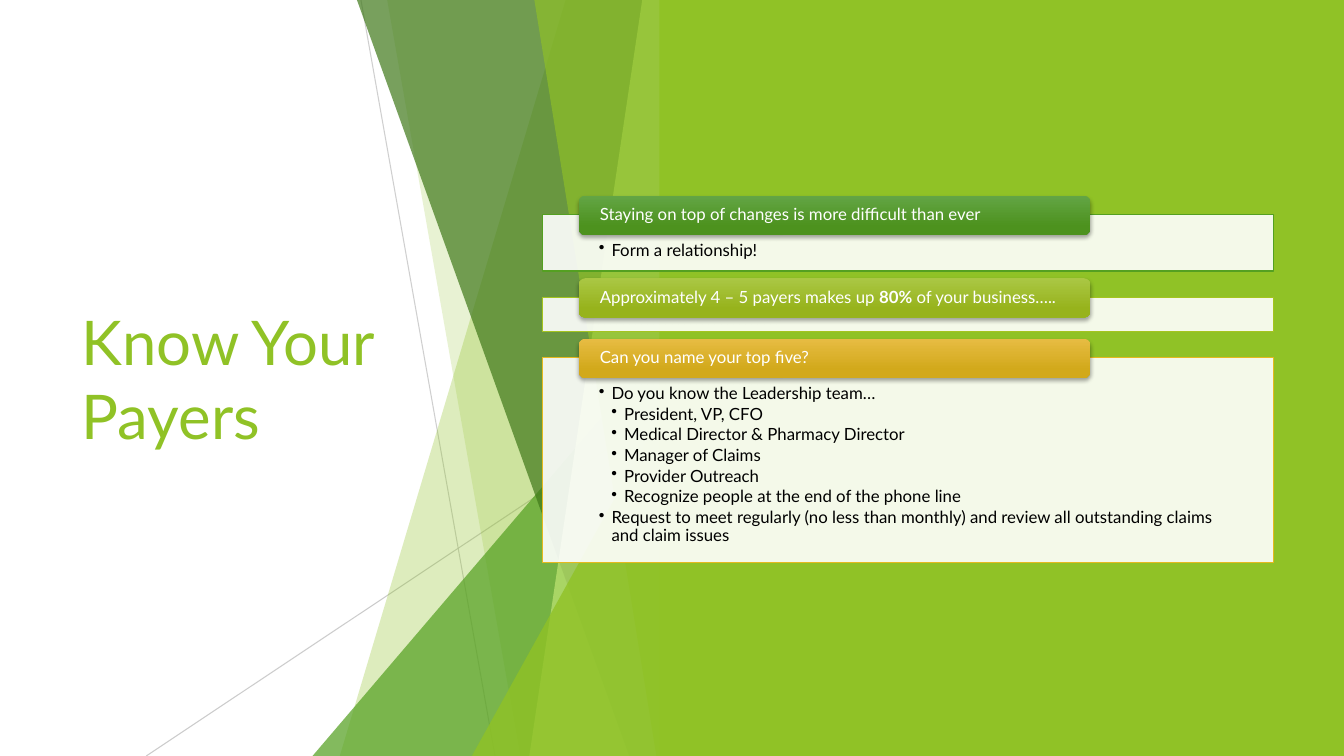
from dataclasses import dataclass

from lxml.etree import SubElement
from pptx import Presentation
from pptx.dml.color import RGBColor
from pptx.enum.shapes import MSO_CONNECTOR, MSO_SHAPE
from pptx.enum.text import MSO_ANCHOR, MSO_AUTO_SIZE, PP_ALIGN
from pptx.oxml.ns import qn
from pptx.util import Inches, Pt


@dataclass(frozen=True)
class Theme:
    font: str = "Lato"
    title_size: int = 44
    body_size: int = 12
    lime: str = "90C226"
    green: str = "54A021"
    forest: str = "3F7819"
    pale: str = "C0E474"
    olive: str = "A5C41F"
    gold: str = "E6B91E"
    gray: str = "BFBFBF"
    white: str = "FFFFFF"
    black: str = "000000"
    green_blend: tuple = ("63A545", "4D921E")
    olive_blend: tuple = ("AAC744", "97B31C")
    gold_blend: tuple = ("E7BC43", "D2A91B")


@dataclass(frozen=True)
class Box:
    left: float
    top: float
    width: float
    height: float

    def inches(self):
        return [Inches(n) for n in (self.left, self.top, self.width, self.height)]


@dataclass(frozen=True)
class Card:
    heading: tuple
    points: tuple
    height: float
    line: str
    blend: tuple


THEME = Theme()
CARD_GAP = 0.26

SLANTS_AND_WEDGES = [
    ("slant", 2.51, 0.27, THEME.lime, 30),
    ("slant", 0.74, 2.06, THEME.lime, 20),
    ("wedge", 0, 3.33, THEME.green, 72),
    ("slant", 0.44, 3.14, THEME.forest, 70),
    ("slant", 3.27, 2.15, THEME.pale, 70),
    ("slant", 2.2, 3.41, THEME.lime, 65),
    ("wedge", 1.58, 3.93, THEME.lime, 80),
]
RAYS = [((0.48, 0), (1.81, 7.5), 75), ((3.56, 4.03), (-1.65, 7.5), 80)]

CARDS = [
    Card(
        (("Staying on top of changes is more difficult than ever", False),),
        ((1, "Form a relationship!"),),
        0.56, THEME.green, THEME.green_blend,
    ),
    Card(
        (("Approximately 4 – 5 payers makes up ", False), ("80% ", True),
         ("of your business…..", False)),
        (),
        0.34, THEME.olive, THEME.olive_blend,
    ),
    Card(
        (("Can you name your top five?", False),),
        (
            (1, "Do you know the Leadership team…"),
            (2, "President, VP, CFO"),
            (2, "Medical Director & Pharmacy Director"),
            (2, "Manager of Claims"),
            (2, "Provider Outreach"),
            (2, "Recognize people at the end of the phone line"),
            (1, "Request to meet regularly (no less than monthly) and review "
                "all outstanding claims and claim issues"),
        ),
        2.03, THEME.gold, THEME.gold_blend,
    ),
]


def rgb(color):
    return RGBColor.from_string(color)


def set_opacity(shape, percent):
    color = next(shape._element.spPr.iter(qn("a:srgbClr")))
    SubElement(color, qn("a:alpha"), val=str(percent * 1000))


def paint(shape, color, opacity=100):
    shape.shadow.inherit = False
    shape.fill.solid()
    shape.fill.fore_color.rgb = rgb(color)
    if opacity < 100:
        set_opacity(shape, opacity)
    shape.line.fill.background()


def add_shadow(shape):
    shape.shadow.inherit = False
    effects = shape._element.spPr.find(qn("a:effectLst"))
    outer = SubElement(effects, qn("a:outerShdw"), blurRad=str(Pt(3)),
                       dist=str(Pt(2)), dir="5400000", rotWithShape="0")
    color = SubElement(outer, qn("a:srgbClr"), val=THEME.black)
    SubElement(color, qn("a:alpha"), val="35000")


def set_frame(shape, anchor, side, top, bottom):
    frame = shape.text_frame
    frame.word_wrap = True
    frame.vertical_anchor = anchor
    frame.margin_left = frame.margin_right = Inches(side)
    frame.margin_top, frame.margin_bottom = Inches(top), Inches(bottom)
    return frame


def format_para(para, color, size, align=PP_ALIGN.LEFT):
    para.alignment = align
    para.font.name = THEME.font
    para.font.size = Pt(size)
    para.font.color.rgb = rgb(color)


def add_bullet(para, level):
    para.level = level
    para.space_after = Pt(1.8)
    props = para._p.get_or_add_pPr()
    props.set("marL", str(Inches(0.125 * level)))
    props.set("indent", str(Inches(-0.125)))
    SubElement(props, qn("a:buChar"), char="•")


def place_title(page, box, text):
    title = page.shapes.title
    title.left, title.top, title.width, title.height = box.inches()
    frame = title.text_frame
    frame.text = text
    frame.word_wrap = True
    frame.auto_size = MSO_AUTO_SIZE.NONE
    frame.vertical_anchor = MSO_ANCHOR.MIDDLE
    format_para(frame.paragraphs[0], THEME.lime, THEME.title_size)


def draw_backdrop(page, box):
    right, bottom = box.left + box.width, box.top + box.height
    for start, end, opacity in RAYS:
        ends = [Inches(n) for x, y in (start, end) for n in (box.left + x, box.top + y)]
        ray = page.shapes.add_connector(MSO_CONNECTOR.STRAIGHT, *ends)
        ray.line.color.rgb = rgb(THEME.gray)
        ray.line.width = Pt(0.75)
        set_opacity(ray, opacity)
        SubElement(ray._element.spPr, qn("a:effectLst"))
    for kind, first, second, color, opacity in SLANTS_AND_WEDGES:
        if kind == "wedge":
            area = Box(box.left + first, box.top + second,
                       box.width - first, box.height - second)
            facet = page.shapes.add_shape(MSO_SHAPE.ISOSCELES_TRIANGLE, *area.inches())
            facet.adjustments[0] = 1
        else:
            corners = [(box.left + first, box.top), (right, box.top),
                       (right, bottom), (box.left + second, bottom)]
            points = [(Inches(x), Inches(y)) for x, y in corners]
            outline = page.shapes.build_freeform(*points[0])
            outline.add_line_segments(points[1:], close=True)
            facet = outline.convert_to_shape()
        paint(facet, color, opacity)


def draw_side_panel(page, box):
    panel = page.shapes.add_shape(MSO_SHAPE.RECTANGLE, *box.inches())
    paint(panel, THEME.lime)


def draw_card(page, box, card):
    panel = page.shapes.add_shape(MSO_SHAPE.RECTANGLE, *box.inches())
    paint(panel, THEME.white, 90)
    panel.line.color.rgb = rgb(card.line)
    panel.line.width = Pt(1)
    if card.points:
        frame = set_frame(panel, MSO_ANCHOR.TOP, 0.56, 0.27, 0.09)
        for index, (level, text) in enumerate(card.points):
            para = frame.add_paragraph() if index else frame.paragraphs[0]
            para.text = text
            para.line_spacing = 0.9
            format_para(para, THEME.black, THEME.body_size)
            add_bullet(para, level)

    tab_box = Box(box.left + 0.36, box.top - 0.19, box.width * 0.7, 0.39)
    tab = page.shapes.add_shape(MSO_SHAPE.ROUNDED_RECTANGLE, *tab_box.inches())
    tab.fill.gradient()
    tab.fill.gradient_angle = 270
    for stop, color, position in zip(tab.fill.gradient_stops, card.blend, (0, 0.78)):
        stop.color.rgb = rgb(color)
        stop.position = position
    tab.line.fill.background()
    add_shadow(tab)
    para = set_frame(tab, MSO_ANCHOR.MIDDLE, 0.19, 0, 0).paragraphs[0]
    para.line_spacing = 0.9
    format_para(para, THEME.white, THEME.body_size)
    for text, bold in card.heading:
        span = para.add_run()
        span.text = text
        span.font.bold = bold


def draw_cards(page, box):
    top = box.top
    for card in CARDS:
        draw_card(page, Box(box.left, top, box.width, card.height), card)
        top += card.height + CARD_GAP


def main():
    deck = Presentation()
    deck.slide_width, deck.slide_height = Inches(13.33), Inches(7.5)
    page = deck.slides.add_slide(deck.slide_layouts[5])
    place_title(page, Box(0.71, 1.51, 3.88, 4.48), "Know Your Payers")
    draw_backdrop(page, Box(3.1, 0, 3.56, 7.5))
    draw_side_panel(page, Box(6.54, 0, 6.79, 7.5))
    draw_cards(page, Box(5.38, 2.13, 7.25, 3.45))
    deck.save("out.pptx")


if __name__ == "__main__":
    main()
